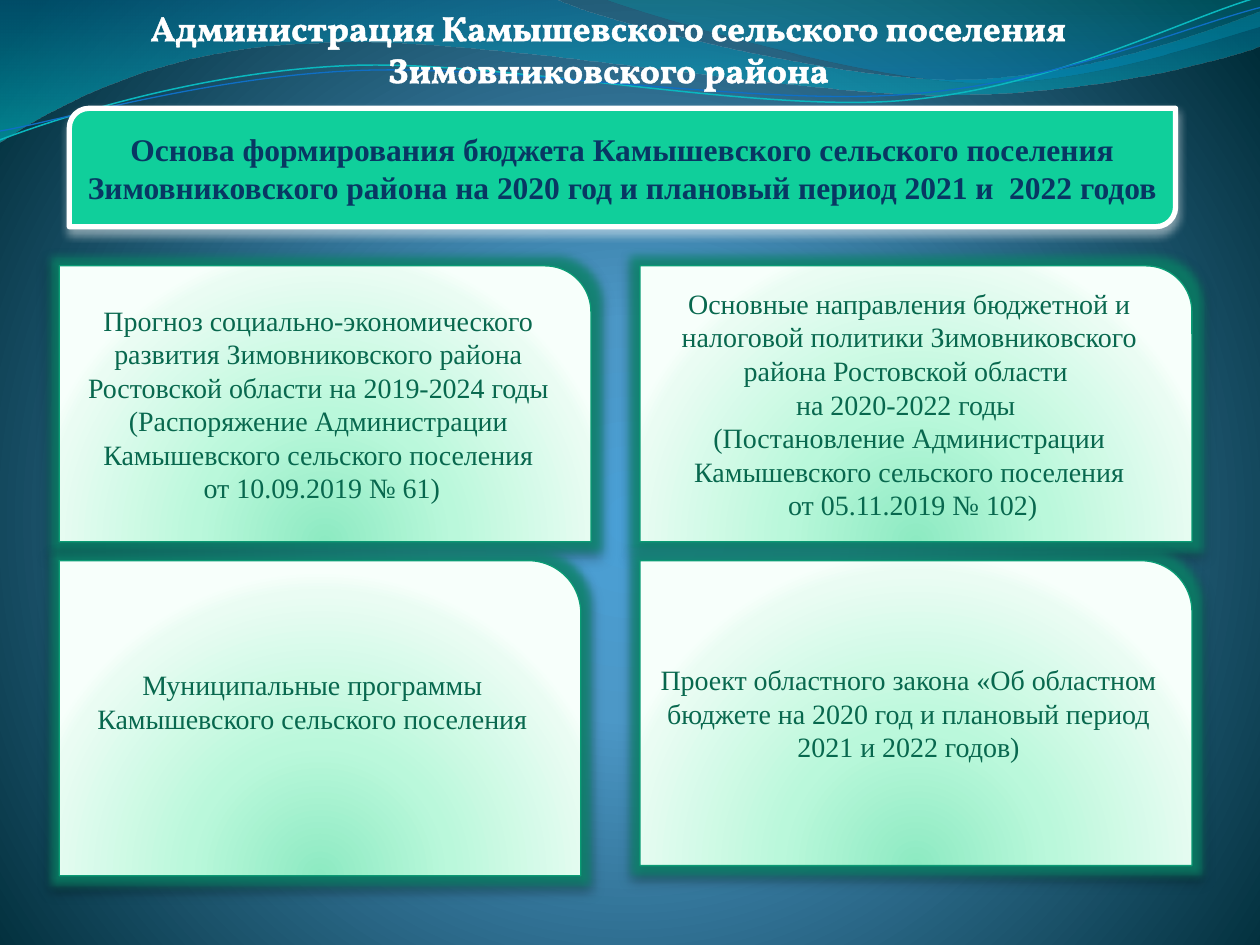
import itertools
import math

import lxml.etree
import pptx
import pptx.dml.color
import pptx.enum.shapes
import pptx.enum.text
import pptx.oxml.ns
import pptx.util

PX = 9144  # 100 px to the inch
W, H = 1000, 750
SERIF, TITLE_FONT = "Times New Roman", "Vollkorn"
COLORS = {
    "white": "FFFFFF", "black": "000000", "navy": "083763", "header": "10CF9B",
    "card_text": "08684E", "card_line": "0A9B74", "card_glow": "0A8A6C",
    "line_teal": "0AB8BF", "line_blue": "0F6FC6",
}
# Gradient stops: position %, colour, opacity %
BACKDROP = [(0, "4AA0D6", 100), (25, "4C98C7", 100), (100, "002C38", 100)]
WAVE_BACK = [(0, "0074A1", 45), (100, "00C6CF", 55)]
WAVE_FRONT = [(0, "00A1A9", 30), (80, "008BBF", 45)]
CARD = [(0, "8DEAC2", 100), (43, "BAF8DB", 100),
        (93, "EAFCF3", 100), (100, "F7FFFB", 100)]


def rgb(name):
    return pptx.dml.color.RGBColor.from_string(COLORS[name])


def add(parent, tag, **attrs):
    return lxml.etree.SubElement(parent, pptx.oxml.ns.qn(tag),
                                 {k: str(v) for k, v in attrs.items()})


def add_color(parent, value, opacity):
    clr = add(parent, "a:srgbClr", val=value)
    if opacity < 100:
        add(clr, "a:alpha", val=opacity * 1000)


def set_gradient(fill, props, stops, focus=None):
    """Radial around focus (left, top, right, bottom in %), else downwards."""
    fill.gradient()
    grad = props.find(pptx.oxml.ns.qn("a:gradFill"))
    for child in list(grad):
        grad.remove(child)
    gs_list = add(grad, "a:gsLst")
    for pos, value, opacity in stops:
        add_color(add(gs_list, "a:gs", pos=pos * 1000), value, opacity)
    if focus:
        radial = add(grad, "a:path", path="circle")
        add(radial, "a:fillToRect",
            **{side: v * 1000 for side, v in zip("ltrb", focus)})
    else:
        add(grad, "a:lin", ang=90 * 60000, scaled=0)


def set_effects(sp, shadow, opacity, blur, glow=None):
    sp.shadow.inherit = False
    effects = sp.element.spPr.find(pptx.oxml.ns.qn("a:effectLst"))
    if glow:
        add_color(add(effects, "a:glow", rad=pptx.util.Pt(10)), COLORS[glow], 75)
    outer = add(effects, "a:outerShdw", blurRad=pptx.util.Pt(blur),
                dist=pptx.util.Pt(3), dir=90 * 60000, rotWithShape=0)
    add_color(outer, COLORS[shadow], opacity)


def set_text(sp, lines, size, color, font=SERIF, bold=False, outline=None,
             anchor="MIDDLE"):
    tf = sp.text_frame
    tf.word_wrap = True
    tf.vertical_anchor = pptx.enum.text.MSO_ANCHOR[anchor]
    for i, line in enumerate(lines):
        p = tf.paragraphs[0] if i == 0 else tf.add_paragraph()
        p.alignment = pptx.enum.text.PP_ALIGN.CENTER
        r = p.add_run()
        r.text = line
        r.font.size, r.font.name, r.font.bold = pptx.util.Pt(size), font, bold
        r.font.color.rgb = rgb(color)
        if outline:
            props = r._r.get_or_add_rPr()
            ln = add(props, "a:ln", w=pptx.util.Pt(outline))
            add_color(add(ln, "a:solidFill"), COLORS[color], 100)
            props.insert(0, ln)
    return tf


def add_box(s, kind, box, line, width):
    sp = s.shapes.add_shape(pptx.enum.shapes.MSO_SHAPE[kind],
                            *(v * PX for v in box))
    sp.line.color.rgb = rgb(line)
    sp.line.width = pptx.util.Pt(width)
    return sp


def add_curve(shapes, origin, points, kinds):
    """Outline of kinds: L takes one point, C takes three, Z closes."""
    emu = [tuple(round((o + v) * PX) for o, v in zip(origin, pt))
           for pt in points]
    builder = shapes.build_freeform(*emu[0], scale=1.0)
    builder.add_line_segments(emu[1:], close="Z" in kinds)
    sp = builder.convert_to_shape()
    sp.shadow.inherit = False
    # Gather each three control points into one cubic curve
    steps = iter(list(sp.element.iter(pptx.oxml.ns.qn("a:lnTo"))))
    for kind in kinds.rstrip("Z"):
        step = next(steps)
        if kind == "C":
            step.tag = pptx.oxml.ns.qn("a:cubicBezTo")
            for extra in (next(steps), next(steps)):
                step.append(extra[0])
                extra.getparent().remove(extra)
    return sp


def draw_wave(s, origin, points, kinds, stops):
    sp = add_curve(s.shapes, origin, points, kinds)
    set_gradient(sp.fill, sp.element.spPr, stops)
    sp.line.fill.background()


def draw_thin_line(group, origin, box, points, color, width, tilt=-2.7):
    """Level the points around the middle of the box, then tilt the shape."""
    cx, cy = box[0] + box[2] / 2, box[1] + box[3] / 2
    sin, cos = math.sin(math.radians(-tilt)), math.cos(math.radians(-tilt))
    level = [(cx + (x - cx) * cos - (y - cy) * sin,
              cy + (x - cx) * sin + (y - cy) * cos) for x, y in points]
    sp = add_curve(group.shapes, origin, level, "CCC")
    sp.rotation = tilt
    sp.fill.background()
    sp.line.color.rgb = rgb(color)
    sp.line.width = pptx.util.Pt(width)


def draw_waves(s, origin):
    # Filled waves
    draw_wave(s, origin, [
        (0, 0), (440, -1), (476, 17), (664, 63), (758, 63), (853, 63),
        (958, 26), (1000, 9), (1001, 36), (983, 44), (870, 76), (746, 75),
        (622, 75), (382, 28), (257, 34), (129, 36), (46, 83), (-1, 113),
    ], "LCCLCCCZ", WAVE_BACK)
    draw_wave(s, origin, [
        (479, -1), (509, 11), (682, 62), (769, 65), (856, 69), (961, 32),
        (1000, 21), (1000, 0),
    ], "CCLZ", WAVE_FRONT)
    # Thin lines
    group = s.shapes.add_group_shape()
    draw_thin_line(group, origin, (-2, 22, 1002, 71), [
        (0, 111), (48, 93), (158, 57), (277, 52), (395, 47), (593, 89),
        (713, 80), (833, 71), (938, 15), (998, -2),
    ], "line_teal", 0.85)
    draw_thin_line(group, origin, (-2, 30, 1003, 58), [
        (0, 104), (47, 96), (164, 61), (283, 56), (403, 51), (597, 84),
        (717, 75), (836, 67), (941, 21), (1000, 6),
    ], "line_blue", 0.75)


def draw_header(s, box, text):
    sp = add_box(s, "ROUND_2_DIAG_RECTANGLE", box, "white", 3)
    sp.fill.solid()
    sp.fill.fore_color.rgb = rgb("header")
    set_effects(sp, "white", 48, 4.5)
    set_text(sp, [text], 18, "navy", bold=True)


def draw_card(s, box, lines, bottom_inset=5):
    sp = add_box(s, "ROUND_1_RECTANGLE", box, "card_line", 0.75)
    set_gradient(sp.fill, sp.element.spPr, CARD, (50, 130, 50, -30))
    set_effects(sp, "black", 40, 5.2, glow="card_glow")
    tf = set_text(sp, lines, 16, "card_text")
    tf.margin_bottom = bottom_inset * PX


def draw_title(s, box, text):
    sp = s.shapes.add_textbox(*(v * PX for v in box))
    tf = set_text(sp, [text], 20, "white", font=TITLE_FONT, bold=True,
                  outline=1.45, anchor="TOP")
    tf.auto_size = pptx.enum.text.MSO_AUTO_SIZE.SHAPE_TO_FIT_TEXT


def main():
    prs = pptx.Presentation()
    prs.slide_width, prs.slide_height = W * PX, H * PX
    s = prs.slides.add_slide(prs.slide_layouts[6])

    # Background
    fill = s.background.fill
    props = s.element.find(".//" + pptx.oxml.ns.qn("p:bgPr"))
    set_gradient(fill, props, BACKDROP, (10, 110, 10, 100))
    draw_waves(s, (0, 0))

    draw_header(s, (55, 86, 878, 94),
                "Основа формирования бюджета Камышевского сельского поселения "
                "Зимовниковского района на 2020 год и плановый период "
                "2021 и  2022 годов ")

    # Cards: two columns, two rows; width, height, lines, bottom inset
    cards = [
        (422, 219, ["Прогноз социально-экономического развития Зимовниковского "
                    "района Ростовской области на 2019-2024 годы",
                    "(Распоряжение Администрации Камышевского сельского поселения",
                    " от 10.09.2019 № 61)"], 5),
        (438, 219, ["Основные направления бюджетной и налоговой политики "
                    "Зимовниковского района Ростовской области ",
                    "на 2020-2022 годы ",
                    "(Постановление Администрации Камышевского сельского поселения",
                    " от 05.11.2019 № 102)"], 5),
        (414, 250, ["Муниципальные программы",
                    "Камышевского сельского поселения"], 32),
        (438, 242, ["Проект областного закона «Об областном бюджете на 2020 год "
                    "и плановый период 2021 и 2022 годов)"], 5),
    ]
    corners = itertools.product((211, 445), (47, 508))
    for (top, left), (w, h, lines, inset) in zip(corners, cards):
        draw_card(s, (left, top, w, h), lines, inset)

    draw_title(s, (75, 0, 816, 77),
               "Администрация Камышевского сельского поселения "
               "Зимовниковского района")
    prs.save("out.pptx")


if __name__ == "__main__":
    main()
